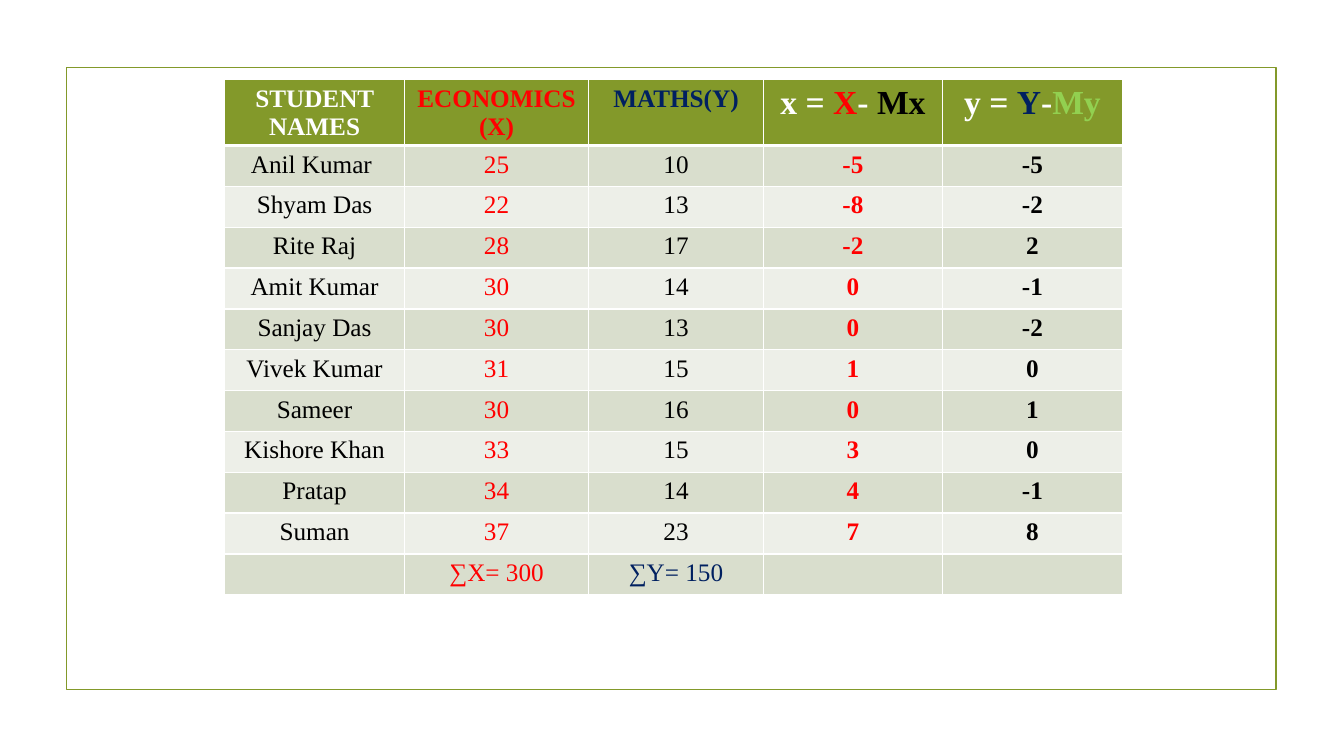
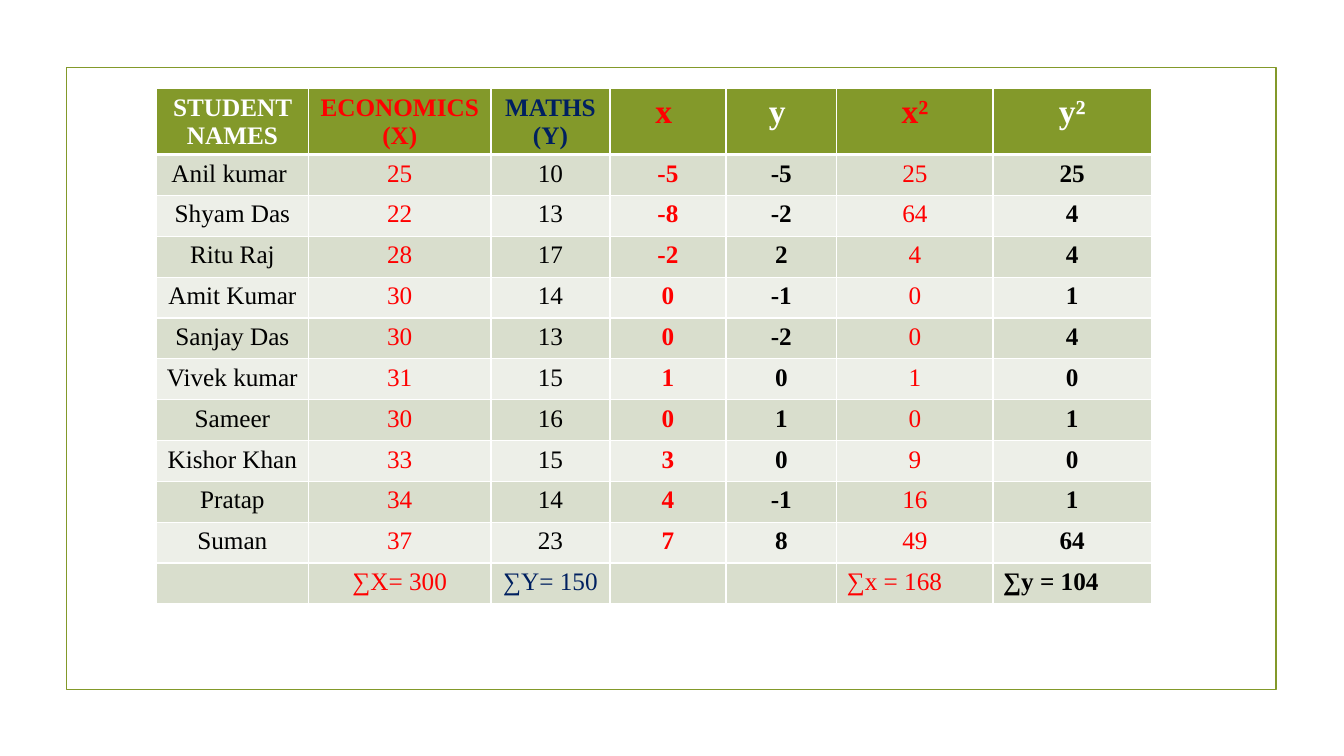
from dataclasses import dataclass

from lxml.etree import SubElement
from pptx import Presentation
from pptx.dml.color import RGBColor
from pptx.enum.shapes import MSO_SHAPE as Shape
from pptx.enum.text import PP_ALIGN as Align
from pptx.oxml.ns import qn
from pptx.slide import Slide, SlideLayout
from pptx.table import _Cell as Cell
from pptx.util import Inches, Pt

FONT = "Times New Roman"
GREEN, LIME, RED, NAVY = "83992A", "92D050", "FF0000", "002060"
WHITE, BLACK = "FFFFFF", "000000"
BANDS = ("D9DECD", "EDEFE8")
HEADER_HEIGHT = Inches(0.65)
ROW_HEIGHT = Inches(4.46) // 11

ECONOMICS = (25, 22, 28, 30, 30, 31, 30, 33, 34, 37)
MATHS = (10, 13, 17, 14, 13, 15, 16, 15, 14, 23)
X_DEVIATIONS = tuple(score - 30 for score in ECONOMICS)
Y_DEVIATIONS = tuple(score - 15 for score in MATHS)
X_SQUARES = tuple(deviation ** 2 for deviation in X_DEVIATIONS)
Y_SQUARES = tuple(deviation ** 2 for deviation in Y_DEVIATIONS)


@dataclass(frozen=True)
class Column:
    """One table column: coloured heading parts, values and an optional total."""

    width: float
    heading: tuple[tuple[str, str], ...]
    values: tuple
    color: str = BLACK
    bold: bool = False
    heading_size: int = 24
    total: str = ""
    total_color: str = BLACK
    total_align: Align = Align.CENTER


@dataclass(frozen=True)
class ScoreTable:
    """A score table with its place on the slide."""

    left: float
    top: float
    columns: tuple[Column, ...]


def score_columns(names: tuple[str, ...], widths: tuple[float, float, float]) -> tuple[Column, ...]:
    """Return the name and score columns that open every table."""
    return (
        Column(widths[0], (("STUDENT NAMES", WHITE),), names, heading_size=18),
        Column(widths[1], (("ECONOMICS(X)", RED),), ECONOMICS, RED, heading_size=18,
               total="∑X= 300", total_color=RED),
        Column(widths[2], (("MATHS(Y)", NAVY),), MATHS, heading_size=18,
               total="∑Y= 150", total_color=NAVY),
    )


DEVIATION_TABLE = ScoreTable(2.23, 0.79, score_columns(
    ("Anil Kumar ", "Shyam Das", "Rite Raj", "Amit Kumar", "Sanjay Das",
     "Vivek Kumar", "Sameer", "Kishore Khan", "Pratap", "Suman"),
    (1.78, 1.83, 1.73),
) + (
    Column(1.78, (("x = ", WHITE), ("X", RED), ("- ", WHITE), ("Mx", BLACK)),
           X_DEVIATIONS, RED, True),
    Column(1.78, (("y = ", WHITE), ("Y", NAVY), ("-", WHITE), ("My", LIME)),
           Y_DEVIATIONS, bold=True),
))

SQUARES_TABLE = ScoreTable(1.55, 0.88, score_columns(
    ("Anil kumar ", "Shyam Das", "Ritu Raj", "Amit Kumar", "Sanjay Das",
     "Vivek kumar", "Sameer", "Kishor Khan", "Pratap", "Suman"),
    (1.51, 1.81, 1.18),
) + (
    Column(1.15, (("x ", RED),), X_DEVIATIONS, RED, True),
    Column(1.1, (("y ", WHITE),), Y_DEVIATIONS, bold=True),
    Column(1.55, (("x²", RED),), X_SQUARES, RED,
           total="∑x = 168", total_color=RED, total_align=Align.LEFT),
    Column(1.57, (("y²", WHITE),), Y_SQUARES, bold=True,
           total="∑y = 104", total_align=Align.LEFT),
))


def rgb(color: str) -> RGBColor:
    """Turn a hex string into a colour."""
    return RGBColor.from_string(color)


def style_cell(cell: Cell, fill: str, top: float = 1, bottom: float = 1) -> None:
    """Give a cell white borders and a solid fill."""
    properties = cell._tc.get_or_add_tcPr()
    for side, width in (("L", 1), ("R", 1), ("T", top), ("B", bottom)):
        line = SubElement(properties, qn(f"a:ln{side}"), w=str(Pt(width)))
        SubElement(SubElement(line, qn("a:solidFill")), qn("a:srgbClr"), val=WHITE)
    cell.fill.solid()
    cell.fill.fore_color.rgb = rgb(fill)


def write_cell(cell: Cell, parts: tuple[tuple[str, str], ...], size: int = 18,
               bold: bool = False, align: Align = Align.CENTER) -> None:
    """Write coloured text parts into a cell."""
    paragraph = cell.text_frame.paragraphs[0]
    paragraph.alignment = align
    for text, color in parts:
        run = paragraph.add_run()
        run.text = text
        run.font.name = FONT
        run.font.size = Pt(size)
        run.font.bold = bold
        run.font.color.rgb = rgb(color)


def add_score_table(slide: Slide, score_table: ScoreTable) -> None:
    """Draw a score table with heading, banded rows and totals."""
    columns = score_table.columns
    row_count = len(ECONOMICS) + 2
    table = slide.shapes.add_table(
        row_count, len(columns), Inches(score_table.left), Inches(score_table.top),
        Inches(sum(column.width for column in columns)),
        HEADER_HEIGHT + ROW_HEIGHT * (row_count - 1)).table
    table.horz_banding = False
    for index, row in enumerate(table.rows):
        row.height = ROW_HEIGHT if index else HEADER_HEIGHT

    for column_index, column in enumerate(columns):
        table.columns[column_index].width = Inches(column.width)
        heading = table.cell(0, column_index)
        style_cell(heading, GREEN, bottom=3)
        write_cell(heading, column.heading, column.heading_size, True)
        for row_index in range(1, row_count):
            style_cell(table.cell(row_index, column_index), BANDS[(row_index - 1) % 2],
                       top=3 if row_index == 1 else 1)
        for row_index, value in enumerate(column.values, 1):
            write_cell(table.cell(row_index, column_index),
                       ((str(value), column.color),), bold=column.bold)
        if column.total:
            write_cell(table.cell(row_count - 1, column_index),
                       ((column.total, column.total_color),),
                       bold=column.bold, align=column.total_align)


def add_layout_frame(layout: SlideLayout, slide: Slide) -> None:
    """Replace the layout's placeholders with the green frame all slides share."""
    for placeholder in list(layout.placeholders):
        layout.shapes.element.remove(placeholder.element)
    frame = slide.shapes.add_shape(
        Shape.RECTANGLE, Inches(0.66), Inches(0.67), Inches(12), Inches(6.17))
    frame.shadow.inherit = False
    frame.fill.background()
    frame.line.color.rgb = rgb(GREEN)
    frame.line.width = Pt(1.25)
    layout.shapes.element.append(frame.element)


def main() -> None:
    """Build and save the presentation."""
    presentation = Presentation()
    presentation.slide_width = Inches(13.33)
    presentation.slide_height = Inches(7.5)
    layout = presentation.slide_layouts[6]
    slides = [presentation.slides.add_slide(layout) for _ in range(2)]
    add_layout_frame(layout, slides[0])
    for slide, score_table in zip(slides, (DEVIATION_TABLE, SQUARES_TABLE)):
        add_score_table(slide, score_table)
    presentation.save("out.pptx")


if __name__ == "__main__":
    main()
